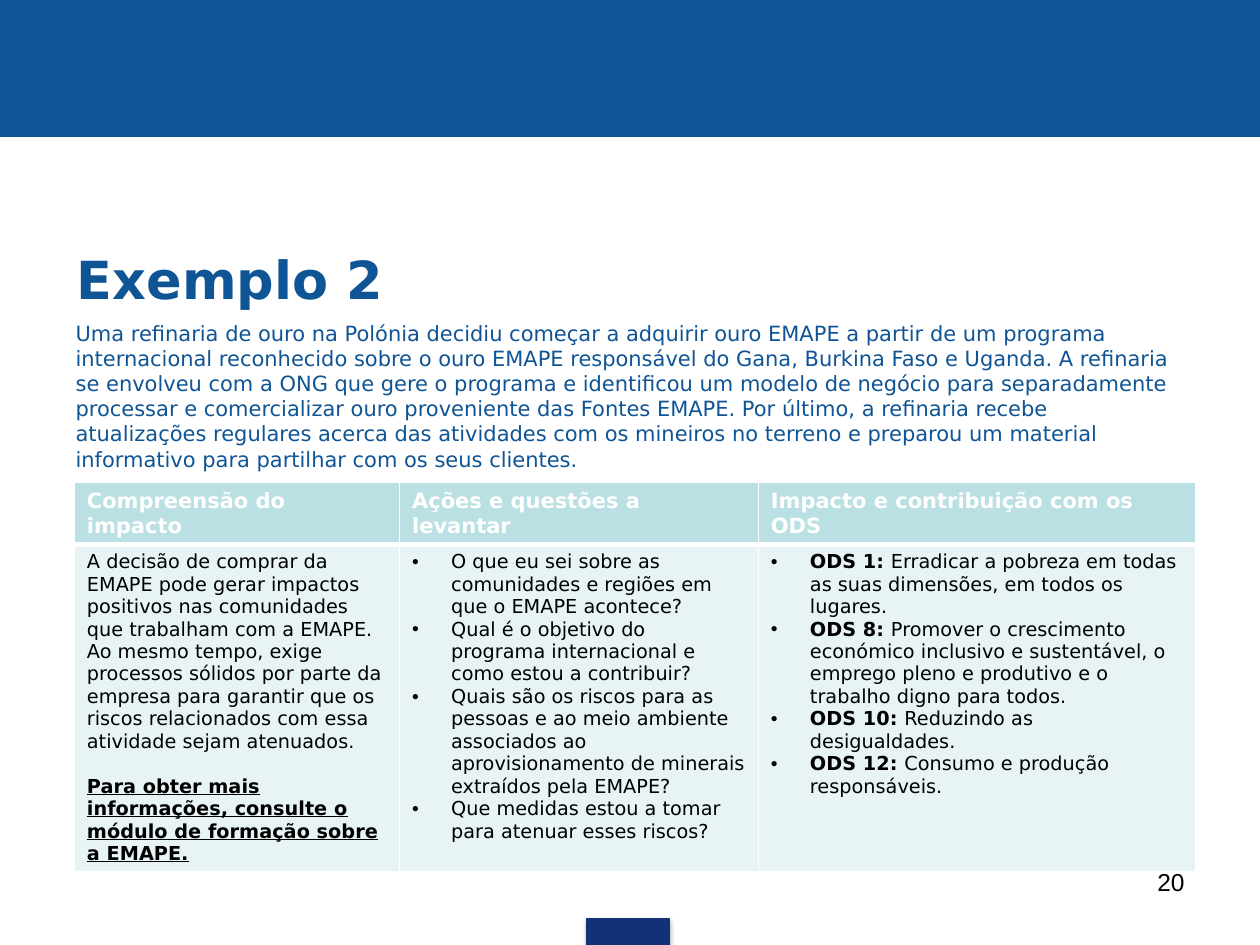
from lxml.etree import SubElement
from pptx import Presentation
from pptx.dml.color import RGBColor
from pptx.enum.shapes import MSO_SHAPE
from pptx.enum.text import MSO_ANCHOR, MSO_AUTO_SIZE, PP_ALIGN
from pptx.oxml import parse_xml
from pptx.oxml.ns import nsdecls, qn
from pptx.util import Inches, Pt

COLUMN = ROW = Inches(0.1)  # grid of 100 columns by 75 rows
BLUE = RGBColor(0x0F, 0x54, 0x94)
NAVY = RGBColor(0x13, 0x31, 0x76)
TEAL = RGBColor(0xBB, 0xE0, 0xE3)
PALE_TEAL = RGBColor(0xE7, 0xF3, 0xF4)
WHITE = RGBColor(0xFF, 0xFF, 0xFF)
BLACK = RGBColor(0, 0, 0)

INTRODUCTION = (
    "Uma refinaria de ouro na Polónia decidiu começar a adquirir ouro EMAPE a partir de um programa "
    "internacional reconhecido sobre o ouro EMAPE responsável do Gana, Burkina Faso e Uganda. A refinaria "
    "se envolveu com a ONG que gere o programa e identificou um modelo de negócio para separadamente "
    "processar e comercializar ouro proveniente das Fontes EMAPE. Por último, a refinaria recebe "
    "atualizações regulares acerca das atividades com os mineiros no terreno e preparou um material "
    "informativo para partilhar com os seus clientes."
)
HEADERS = ["Compreensão do impacto", "Ações e questões a levantar", "Impacto e contribuição com os ODS"]
IMPACT = (
    "A decisão de comprar da EMAPE pode gerar impactos positivos nas comunidades que trabalham com a "
    "EMAPE. Ao mesmo tempo, exige processos sólidos por parte da empresa para garantir que os riscos "
    "relacionados com essa atividade sejam atenuados."
)
MORE_INFORMATION = "Para obter mais informações, consulte o módulo de formação sobre a EMAPE."
QUESTIONS = [
    "O que eu sei sobre as comunidades e regiões em que o EMAPE acontece?",
    "Qual é o objetivo do programa internacional e como estou a contribuir?",
    "Quais são os riscos para as pessoas e ao meio ambiente associados ao aprovisionamento de minerais "
    "extraídos pela EMAPE?",
    "Que medidas estou a tomar para atenuar esses riscos?",
]
GOALS = [
    ("ODS 1: ", "Erradicar a pobreza em todas as suas dimensões, em todos os lugares."),
    ("ODS 8: ", "Promover o crescimento económico inclusivo e sustentável, o emprego pleno e produtivo e o "
                "trabalho digno para todos."),
    ("ODS 10: ", "Reduzindo as desigualdades."),
    ("ODS 12: ", "Consumo e produção responsáveis."),
]


def grid_box(left, top, width, height):
    return int(left * COLUMN), int(top * ROW), int(width * COLUMN), int(height * ROW)


def place(shape, box):
    shape.left, shape.top, shape.width, shape.height = box


def add_text(frame, text, lead="", size=11, font="DejaVu Sans", color=BLACK, bold=False,
             underline=False, align=PP_ALIGN.LEFT, bullet=False, space_before=0):
    """Fill the empty first paragraph of the frame, or append one; lead is a bold opening."""
    paragraph = frame.paragraphs[0]
    if paragraph.runs:
        paragraph = frame.add_paragraph()
    properties = paragraph._p.get_or_add_pPr()
    indent = Inches(0.31) if bullet else 0
    properties.set("marL", str(indent))
    properties.set("indent", str(-indent))
    if bullet:
        SubElement(properties, qn("a:buFont")).set("typeface", "Arial")
        SubElement(properties, qn("a:buChar")).set("char", "•")
    else:
        SubElement(properties, qn("a:buNone"))
    paragraph.alignment = align
    paragraph.space_before = Pt(space_before)
    for part, is_bold in ((lead, True), (text, bold)):
        if part:
            run = paragraph.add_run()
            run.text = part
            run.font.name = font
            run.font.size = Pt(size)
            run.font.bold = is_bold
            run.font.underline = underline
            run.font.color.rgb = color


def add_rectangle(slide, box, color):
    rectangle = slide.shapes.add_shape(MSO_SHAPE.RECTANGLE, *box)
    rectangle.shadow.inherit = False
    rectangle.fill.solid()
    rectangle.fill.fore_color.rgb = color
    rectangle.line.color.rgb = color
    rectangle.line.width = Pt(0.75)
    return rectangle


def add_footer_tab(slide, box):
    tab = add_rectangle(slide, box, NAVY)
    effects = tab._element.spPr.find(qn("a:effectLst"))
    effects.append(parse_xml(
        f'<a:outerShdw {nsdecls("a")} blurRad="{Pt(3.1)}" dist="{Pt(1.8)}" dir="5400000" rotWithShape="0">'
        '<a:srgbClr val="000000"><a:alpha val="35000"/></a:srgbClr></a:outerShdw>'))


def fill_placeholder(placeholder, box, text, anchor, **text_format):
    place(placeholder, box)
    frame = placeholder.text_frame
    frame.word_wrap = True
    frame.auto_size = MSO_AUTO_SIZE.NONE
    frame.vertical_anchor = anchor
    add_text(frame, text, color=BLUE, **text_format)


def style_cell(cell, color, top, bottom):
    properties = cell._tc.get_or_add_tcPr()
    for side, width in (("L", 1), ("R", 1), ("T", top), ("B", bottom)):
        properties.append(parse_xml(
            f'<a:ln{side} {nsdecls("a")} w="{Pt(width)}"><a:solidFill><a:srgbClr val="{WHITE}"/>'
            f'</a:solidFill></a:ln{side}>'))
    cell.fill.solid()
    cell.fill.fore_color.rgb = color


def add_impact_table(slide, box):
    table = slide.shapes.add_table(2, len(HEADERS), *box).table
    height = box[3]
    table.rows[0].height = int(height * 0.16)
    table.rows[1].height = height - table.rows[0].height
    for column, share in zip(table.columns, (0.29, 0.32, 0.39)):
        column.width = int(box[2] * share)
    for index, header in enumerate(HEADERS):
        style_cell(table.cell(0, index), TEAL, top=1, bottom=3)
        style_cell(table.cell(1, index), PALE_TEAL, top=3, bottom=1)
        add_text(table.cell(0, index).text_frame, header, size=12, bold=True, color=WHITE)
    impact, questions, goals = (cell.text_frame for cell in table.rows[1].cells)
    add_text(impact, IMPACT)
    add_text(impact, MORE_INFORMATION, bold=True, underline=True, space_before=12.8)
    for question in QUESTIONS:
        add_text(questions, question, bullet=True)
    for goal, description in GOALS:
        add_text(goals, description, lead=goal, bullet=True)


def add_page_number(slide, box):
    frame = slide.shapes.add_textbox(*box).text_frame
    frame.word_wrap = True
    add_text(frame, "20", size=14, font="Arial", align=PP_ALIGN.RIGHT)


def main():
    presentation = Presentation()
    presentation.slide_width, presentation.slide_height = 100 * COLUMN, 75 * ROW
    slide = presentation.slides.add_slide(presentation.slide_layouts[1])
    add_rectangle(slide, grid_box(0, 0, 100, 10.8), BLUE)
    add_footer_tab(slide, grid_box(46.6, 72.9, 6.5, 2.1))
    fill_placeholder(slide.shapes.title, grid_box(5.1, 17, 90, 10.2), "Exemplo 2",
                     MSO_ANCHOR.MIDDLE, size=30, bold=True)
    fill_placeholder(slide.placeholders[1], grid_box(5, 24.9, 90, 12.6), INTRODUCTION,
                     MSO_ANCHOR.TOP, size=12)
    add_impact_table(slide, grid_box(5.9, 38.3, 89, 30.7))
    add_page_number(slide, grid_box(71.7, 68.3, 23.3, 5.2))
    presentation.save("out.pptx")


if __name__ == "__main__":
    main()
